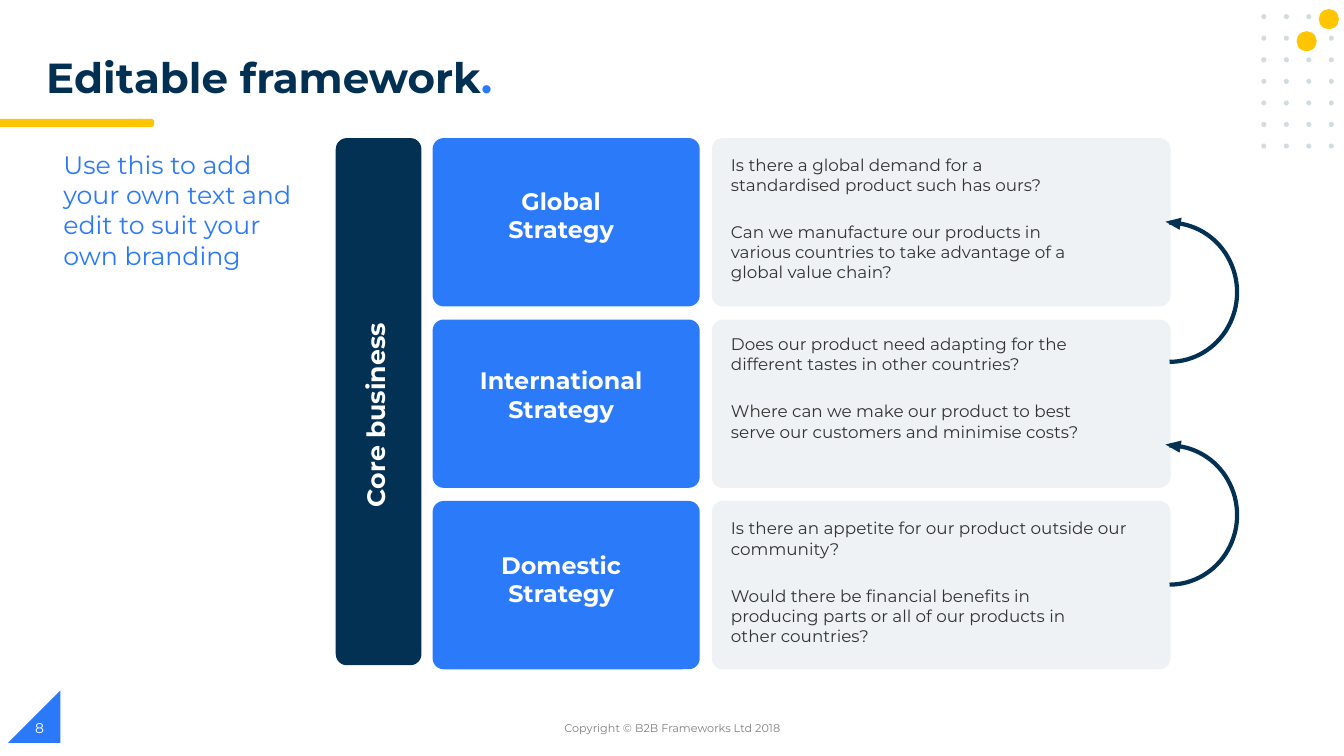
import math

from pptx import Presentation
from pptx import util as u
from pptx.dml.color import RGBColor
from pptx.enum import shapes, text

HUES = {
    "white": "FFFFFF", "blue": "2B79F8", "panel": "2B7AF9", "navy": "023154",
    "title": "023053", "gold": "FFC600", "dot": "D1DBE0", "pale": "EEF2F4",
    "ink": "333333", "grey": "7F7F7F",
}
KIND = shapes.MSO_SHAPE
ALIGN = text.PP_ALIGN
FONT = "Montserrat"
TIGHT = (0, 0.01, 0, 0)

ROWS = [
    ("Global Strategy", 0, [
        ("Is there a global demand for a standardised product such has ours?", 3.4, 0.41),
        ("Can we manufacture our products in various countries to take advantage "
         "of a global value chain?", 3.67, 0.62)]),
    ("International Strategy", -0.02, [
        ("Does our product need adapting for the different tastes in other countries?",
         3.67, 0.41),
        ("Where can we make our product to best serve our customers and minimise costs?",
         3.8, 0.41)]),
    ("Domestic Strategy", 0.01, [
        ("Is there an appetite for our product outside our community?", 3.97, 0.41),
        ("Would there be ﬁnancial beneﬁts in producing parts or all of our products "
         "in other countries?", 3.66, 0.62)]),
]


def hue(name):
    return RGBColor.from_string(HUES[name])


def paint(shape, fill):
    shape.shadow.inherit = False
    shape.fill.solid()
    shape.fill.fore_color.rgb = hue(fill)
    shape.line.fill.background()
    return shape


def block(slide, kind, box, fill):
    return paint(slide.shapes.add_shape(kind, *map(u.Inches, box)), fill)


def panel(slide, box, fill):
    shape = block(slide, KIND.ROUNDED_RECTANGLE, box, fill)
    shape.adjustments[0] = 0.11 / min(box[2:])


def write(slide, box, *runs, size, bold=False, align=ALIGN.LEFT, pad=TIGHT,
          middle=False, space=1.0, turn=0):
    shape = slide.shapes.add_textbox(*map(u.Inches, box))
    shape.rotation = turn
    frame = shape.text_frame
    frame.word_wrap = True
    (frame.margin_left, frame.margin_top,
     frame.margin_right, frame.margin_bottom) = map(u.Inches, pad)
    frame.vertical_anchor = text.MSO_ANCHOR.MIDDLE if middle else text.MSO_ANCHOR.TOP
    para = frame.paragraphs[0]
    para.alignment = align
    para.line_spacing = space
    for words, color in runs:
        run = para.add_run()
        run.text = words
        run.font.name = FONT
        run.font.size = u.Pt(size)
        run.font.bold = bold
        run.font.color.rgb = hue(color)


def trace(slide, points):
    spots = [(u.Inches(x), u.Inches(y)) for x, y in points]
    return slide.shapes.build_freeform(*spots[0]), spots[1:]


def dots(slide, left, top):
    for row in range(7):
        for col in range(4):
            spot = (left + col * 0.223, top + row * 0.214, 0.05, 0.05)
            block(slide, KIND.OVAL, spot, "dot")
    for x, y in ((0.57, -0.05), (0.35, 0.17)):
        block(slide, KIND.OVAL, (left + x, top + y, 0.2, 0.2), "gold")


def header(slide, left, top):
    pad = (0.1, 0.05, 0.1, 0.05)
    for y in (top + 0.66, top + 0.68):
        block(slide, KIND.FLOWCHART_TERMINATOR, (1.34, y, 0.19, 0.06), "gold")
        block(slide, KIND.RECTANGLE, (0, y, 1.41, 0.06), "gold")
    write(slide, (left, top, 5.64, 0.6), ("Editable framework", "title"), (".", "blue"),
          size=30, bold=True, pad=pad, space=0.9)
    write(slide, (left + 0.17, top + 0.91, 2.65, 1.52),
          ("Use this to add your own text and edit to suit your own branding", "blue"),
          size=18, pad=pad)


def footer(slide, top):
    pad = (0.1, 0.05, 0.1, 0.05)
    corner = block(slide, KIND.RIGHT_TRIANGLE, (0.08, top - 0.17, 0.52, 0.52), "blue")
    corner._element.spPr.xfrm.set("flipH", "1")
    write(slide, (4.42, top, 4.5, 0.4), ("Copyright © B2B Frameworks Ltd 2018", "grey"),
          size=8, align=ALIGN.CENTER, pad=pad, middle=True)
    write(slide, (0.25, top, 3, 0.4), ("8", "white"), size=10, pad=pad, middle=True)


def core(slide, left, top, width, height):
    panel(slide, (left, top, width, height), "navy")
    write(slide, (left - 0.65, top + 2.47, 2.08, 0.3), ("Core business", "white"),
          size=18, bold=True, pad=(0, 0, 0, 0), turn=270)


def strip(slide, left, top, name, nudge, asks):
    panel(slide, (left, top, 2.65, 1.67), "panel")
    panel(slide, (left + 2.77, top, 4.55, 1.67), "pale")
    write(slide, (left + 0.4, top + 0.47 + nudge, 1.75, 0.58), (name, "white"),
          size=17, bold=True, align=ALIGN.CENTER)
    for num, (ask, width, height) in enumerate(asks):
        y = top + 0.15 + nudge + num * 0.67
        write(slide, (left + 2.96, y, width, height), (ask, "ink"), size=12)


def loop(slide, left, top, width, height):
    half = height / 2
    turns = [math.pi * step / 48 for step in range(49)]
    pen, rest = trace(slide, [(left + width * math.sin(t), top + half - half * math.cos(t))
                              for t in turns])
    pen.add_line_segments(rest, close=False)
    curve = pen.convert_to_shape()
    curve.shadow.inherit = False
    curve.fill.background()
    curve.line.color.rgb = hue("navy")
    curve.line.width = u.Pt(3)
    pen, rest = trace(slide, [(left + 0.12, top - 0.05), (left - 0.04, top - 0.01),
                              (left + 0.1, top + 0.07)])
    pen.add_line_segments(rest, close=True)
    paint(pen.convert_to_shape(), "navy")


def main():
    deck = Presentation()
    deck.slide_width, deck.slide_height = u.Inches(13.33), u.Inches(7.5)
    slide = deck.slides.add_slide(deck.slide_layouts[6])
    dots(slide, 12.51, 0.14)
    header(slide, 0.36, 0.52)
    footer(slide, 7.02)
    core(slide, 3.33, 1.37, 0.85, 5.23)
    for num, row in enumerate(ROWS):
        strip(slide, 4.29, 1.37 + num * 1.8, *row)
    for top in (2.21, 4.42):
        loop(slide, 11.6, top, 0.67, 1.38)
    deck.save("out.pptx")


if __name__ == "__main__":
    main()
